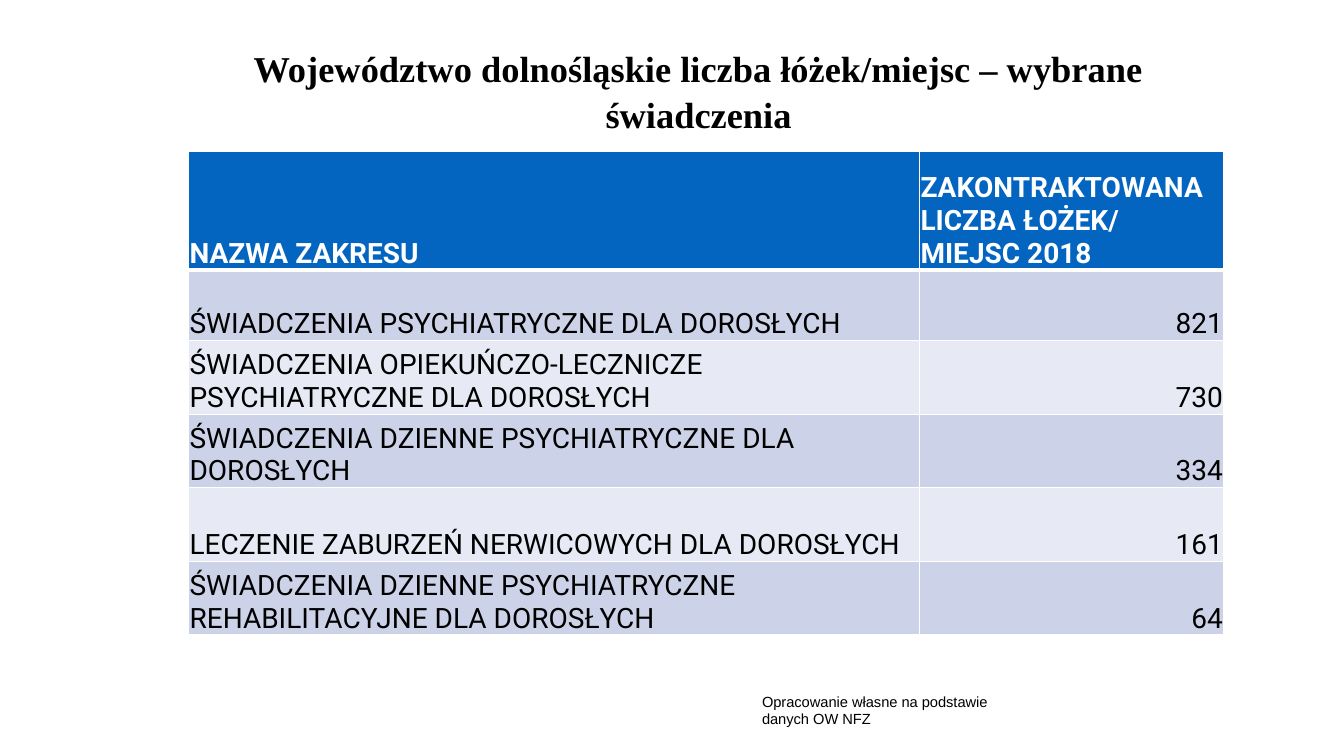
import pptx
import pptx.util
import pptx.dml.color
import pptx.enum.text
import pptx.oxml
import pptx.oxml.ns

Inches, Pt = pptx.util.Inches, pptx.util.Pt
ALIGN = pptx.enum.text.PP_ALIGN
ANCHOR = pptx.enum.text.MSO_ANCHOR
COLORS = {"black": "000000", "white": "FFFFFF", "header": "0365C0",
          "odd": "CCD3E8", "even": "E7EAF4"}
ROWS = [
    ("NAZWA ZAKRESU", "ZAKONTRAKTOWANA LICZBA ŁOŻEK/\nMIEJSC 2018"),
    ("ŚWIADCZENIA PSYCHIATRYCZNE DLA DOROSŁYCH", "821"),
    ("ŚWIADCZENIA OPIEKUŃCZO-LECZNICZE PSYCHIATRYCZNE DLA DOROSŁYCH", "730"),
    ("ŚWIADCZENIA DZIENNE PSYCHIATRYCZNE DLA DOROSŁYCH", "334"),
    ("LECZENIE ZABURZEŃ NERWICOWYCH DLA DOROSŁYCH", "161"),
    ("ŚWIADCZENIA DZIENNE PSYCHIATRYCZNE REHABILITACYJNE DLA DOROSŁYCH", "64"),
]
COL_WIDTHS = [7.25, 3.02]
ROW_HEIGHTS = [1.18, 0.7, 0.73, 0.73, 0.73, 0.73]


def format_text(tf, font, size, color, bold=False, align=ALIGN.LEFT):
    for p in tf.paragraphs:
        p.alignment = align
        for r in p.runs:
            r.font.name = font
            r.font.size = Pt(size)
            r.font.bold = bold
            r.font.color.rgb = pptx.dml.color.RGBColor.from_string(COLORS[color])


def add_border(cell, side, width):
    """Draw a white line of the given width in points on side L, R, T or B."""
    cell._tc.get_or_add_tcPr().append(pptx.oxml.parse_xml(
        f'<a:ln{side} {pptx.oxml.ns.nsdecls("a")} w="{Pt(width)}"><a:solidFill>'
        f'<a:srgbClr val="{COLORS["white"]}"/></a:solidFill></a:ln{side}>'))


prs = pptx.Presentation()
prs.slide_width, prs.slide_height = Inches(13.33), Inches(7.5)
s = prs.slides.add_slide(prs.slide_layouts[5])

# Title
title = s.shapes.title
title.left, title.top = Inches(1.71), Inches(0.44)
title.width, title.height = Inches(10.44), Inches(0.67)
tf = title.text_frame
tf.text = "Województwo dolnośląskie liczba łóżek/miejsc – wybrane świadczenia"
tf.margin_left = tf.margin_right = tf.margin_top = tf.margin_bottom = 0
tf.vertical_anchor = ANCHOR.TOP
tf.word_wrap = True
tf.auto_size = pptx.enum.text.MSO_AUTO_SIZE.NONE
tf.paragraphs[0].line_spacing = 1.05
format_text(tf, "Times New Roman", 26, "black", True, ALIGN.CENTER)

# Table of contracted beds
table = s.shapes.add_table(len(ROWS), len(COL_WIDTHS), Inches(1.87), Inches(1.5),
                           Inches(sum(COL_WIDTHS)), Inches(sum(ROW_HEIGHTS))).table
for column, width in zip(table.columns, COL_WIDTHS):
    column.width = Inches(width)
for i, (row, height) in enumerate(zip(ROWS, ROW_HEIGHTS)):
    table.rows[i].height = Inches(height)
    header = i == 0
    for j, text in enumerate(row):
        cell = table.cell(i, j)
        cell.text = text
        cell.vertical_anchor = ANCHOR.BOTTOM
        cell.margin_left = cell.margin_right = cell.margin_top = Inches(0.01)
        cell.margin_bottom = 0
        format_text(cell.text_frame, "Roboto", 20, "white" if header else "black",
                    header, ALIGN.RIGHT if j and not header else ALIGN.LEFT)
        for side in "LRTB":
            below_header = (i, side) in ((0, "B"), (1, "T"))
            add_border(cell, side, 3 if below_header else 1)
        fill = "header" if header else "odd" if i % 2 else "even"
        cell.fill.solid()
        cell.fill.fore_color.rgb = pptx.dml.color.RGBColor.from_string(COLORS[fill])

# Source note
note = s.shapes.add_textbox(Inches(7.46), Inches(6.82), Inches(2.66), Inches(0.45))
tf = note.text_frame
tf.word_wrap = True
tf.text = "Opracowanie własne na podstawie danych OW NFZ"
format_text(tf, "Arial", 10.5, "black")

prs.save("out.pptx")
